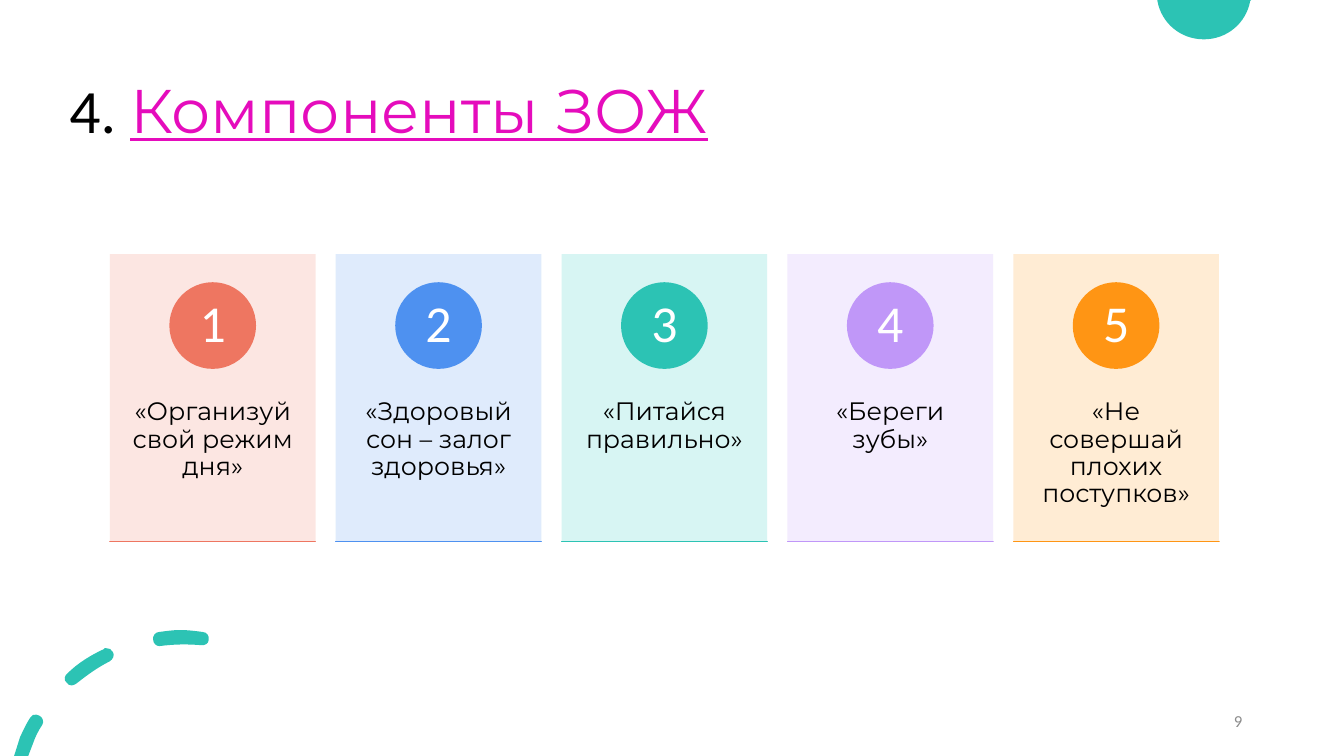
import dataclasses

import lxml.etree
import pptx
import pptx.dml.color
import pptx.enum.shapes
import pptx.enum.text
import pptx.oxml.ns
import pptx.util

PX = 9144  # EMU in one px, 100 px to the inch
ALIGN = pptx.enum.text.PP_ALIGN
ANCHOR = pptx.enum.text.MSO_ANCHOR
SHAPE = pptx.enum.shapes.MSO_SHAPE


@dataclasses.dataclass(frozen=True)
class Theme:
    plain: str = "Calibri"
    display: str = "Montserrat"
    black: str = "000000"
    white: str = "FFFFFF"
    grey: str = "8C8C8C"
    pink: str = "E50CBC"
    teal: str = "2CC3B4"
    title_size: int = 44
    number_size: int = 37
    card_size: int = 18
    footer_size: int = 12


THEME = Theme()

# Card text, strong colour, pale colour
CARDS = [
    ("«Организуй свой режим дня»", "EE7661", "FCE4DF"),
    ("«Здоровый сон – залог здоровья»", "4E91F0", "DCE9FC"),
    ("«Питайся правильно»", THEME.teal, "D3F5F2"),
    ("«Береги зубы»", "C097F8", "F2EAFE"),
    ("«Не совершай плохих поступков»", "FF9514", "FFEAD0"),
]
CARD_LEFT, CARD_TOP, CARD_WIDTH, CARD_HEIGHT = 109, 252, 204, 285
CARD_STEP = 224
CIRCLE, NUMBER_BOX = 86, 60

# Outlines in px: a start point, then lines (2 values) or curves (6 values)
HALF_DISC = [
    [(1148, 0), (1241, 0), (1240, 1), (1236, 23, 1217, 39, 1194, 39),
     (1171, 39, 1152, 23, 1148, 1)],
]
DASHED_ARC = [
    [(36, 709), (34, 708, 31, 710, 30, 712), (26, 718, 23, 725, 20, 731),
     (14, 750), (28, 750), (33, 737), (35, 731, 38, 725, 42, 719),
     (44, 716, 42, 711, 39, 710), (38, 709, 37, 709, 36, 709)],
    [(105, 643), (104, 643, 103, 643, 103, 644), (90, 650, 77, 658, 67, 668),
     (64, 670, 63, 675, 66, 677), (67, 679, 69, 680, 71, 680),
     (73, 680, 74, 679, 76, 678), (86, 670, 97, 662, 109, 656),
     (112, 654, 114, 650, 112, 647), (111, 644, 108, 643, 105, 643)],
    [(179, 625), (172, 625, 165, 626, 158, 627), (154, 627, 151, 631, 152, 635),
     (152, 638, 155, 641, 158, 641), (173, 639, 186, 639, 199, 640),
     (203, 641, 207, 638, 207, 635), (208, 631, 205, 627, 201, 627),
     (194, 626, 186, 625, 179, 625)],
]


def emu(*lengths):
    return [pptx.util.Emu(length * PX) for length in lengths]


def rgb(value):
    return pptx.dml.color.RGBColor.from_string(value)


def apply_format(target, values):
    for name, value in values.items():
        setattr(target, name, value)


def paint(shape, color, opacity=100):
    shape.shadow.inherit = False
    shape.fill.solid()
    shape.fill.fore_color.rgb = rgb(color)
    shape.line.fill.background()
    if opacity < 100:
        node = shape._element.spPr.find(".//" + pptx.oxml.ns.qn("a:srgbClr"))
        alpha = lxml.etree.SubElement(node, pptx.oxml.ns.qn("a:alpha"))
        alpha.set("val", str(opacity * 1000))


def add_filled(shapes, kind, bounds, color, opacity=100):
    shape = shapes.add_shape(kind, *emu(*bounds))
    paint(shape, color, opacity)
    return shape


def add_edge(shapes, left, top, width, color):
    """A flat bar, seen only by its outline."""
    edge = add_filled(shapes, SHAPE.RECTANGLE, (left, top, width, 0), color)
    edge.line.color.rgb = rgb(color)
    edge.line.width = pptx.util.Pt(1)


def write_text(shape, spans, insets=(10, 5), align=ALIGN.LEFT,
               anchor=ANCHOR.MIDDLE, spacing=0.9):
    """Each span is (text, colour, font format)."""
    frame = shape.text_frame
    side, end = emu(*insets)
    apply_format(frame, {
        "word_wrap": True, "vertical_anchor": anchor,
        "auto_size": pptx.enum.text.MSO_AUTO_SIZE.NONE,
        "margin_left": side, "margin_right": side,
        "margin_top": end, "margin_bottom": end})
    para = frame.paragraphs[0]
    apply_format(para, {"alignment": align, "line_spacing": spacing})
    for text, color, values in spans:
        span = para.add_run()
        span.text = text
        span.font.color.rgb = rgb(color)
        apply_format(span.font, values)


def add_label(shapes, bounds, spans, **layout):
    """Text in a clear rectangle, which keeps its height."""
    label = add_filled(shapes, SHAPE.RECTANGLE, bounds, THEME.white)
    label.fill.background()
    write_text(label, spans, **layout)


def font(name, size, **extra):
    return {"name": name, "size": pptx.util.Pt(size), **extra}


def add_outlines(shapes, outlines, color):
    builder = shapes.build_freeform(*emu(*outlines[0][0]), scale=1.0)
    for number, (start, *parts) in enumerate(outlines):
        if number:
            builder.move_to(*emu(*start))
        points = [emu(*part[at:at + 2])
                  for part in parts for at in range(0, len(part), 2)]
        builder.add_line_segments(points, close=True)
    shape = builder.convert_to_shape()
    paint(shape, color)
    # Join each three points of a curve into one cubic segment
    nodes = iter(list(shape._element.iter(pptx.oxml.ns.qn("a:lnTo"))))
    for part in (part for outline in outlines for part in outline[1:]):
        node = next(nodes)
        if len(part) == 6:
            node.tag = pptx.oxml.ns.qn("a:cubicBezTo")
            for extra in (next(nodes), next(nodes)):
                node.append(extra[0])
                extra.getparent().remove(extra)


def add_card(shapes, index, text, strong, pale):
    left = CARD_LEFT + index * CARD_STEP
    add_filled(shapes, SHAPE.RECTANGLE,
               (left, CARD_TOP, CARD_WIDTH, CARD_HEIGHT), pale, opacity=90)
    add_label(shapes, (left, 360, CARD_WIDTH, 171),
              [(text, THEME.black, font(THEME.display, THEME.card_size))],
              insets=(16, 36), align=ALIGN.CENTER, anchor=ANCHOR.TOP)
    # Numbered circle
    add_filled(shapes, SHAPE.OVAL, (left + 59, 280, CIRCLE, CIRCLE), strong)
    add_label(shapes, (left + 72, 293, NUMBER_BOX, NUMBER_BOX),
              [(str(index + 1), THEME.white, font(THEME.plain, THEME.number_size))],
              insets=(7, 1), align=ALIGN.CENTER)
    add_edge(shapes, left, CARD_TOP + CARD_HEIGHT, CARD_WIDTH, strong)


def main():
    deck = pptx.Presentation()
    deck.slide_width, deck.slide_height = emu(1333, 750)
    page = deck.slides.add_slide(deck.slide_layouts[6])

    # Decoration
    for outlines in (HALF_DISC, DASHED_ARC):
        add_outlines(page.shapes, outlines, THEME.teal)

    # Title
    title = page.shapes.add_textbox(*emu(59, 40, 1150, 145))
    write_text(title, [
        ("4. ", THEME.black, font(THEME.plain, THEME.title_size)),
        ("Компоненты ЗОЖ", THEME.pink,
         font(THEME.display, THEME.title_size, underline=True))])

    # Row of cards
    row = page.shapes.add_group_shape()
    for index, card in enumerate(CARDS):
        add_card(row.shapes, index, *card)

    # Page number
    footer = page.shapes.add_textbox(*emu(942, 695, 300, 40))
    write_text(footer, [("9", THEME.grey, font(THEME.plain, THEME.footer_size))],
               align=ALIGN.RIGHT, spacing=1.0)

    deck.save("out.pptx")


if __name__ == "__main__":
    main()
